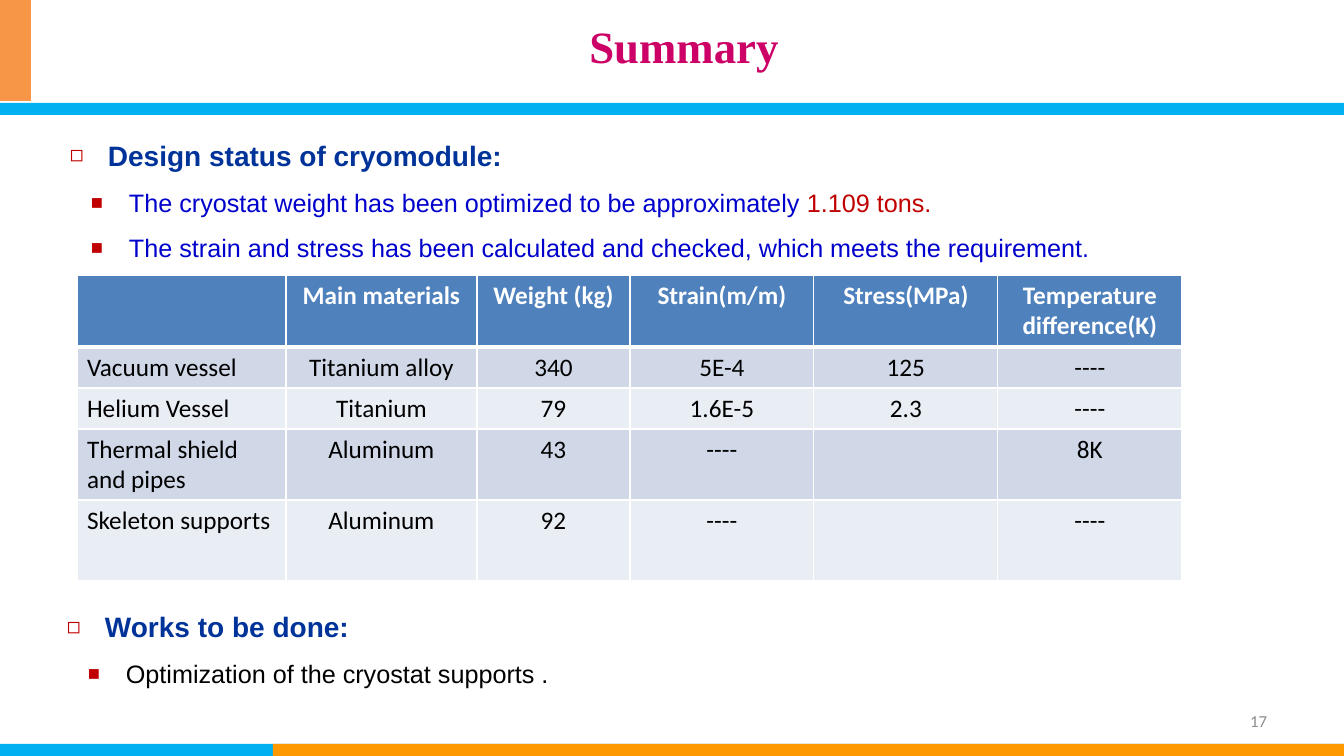
import pptx
import pptx.util
import pptx.dml.color
import pptx.enum.shapes
import pptx.enum.text
import pptx.oxml.ns
from dataclasses import dataclass
from lxml import etree

SLIDE_WIDTH, SLIDE_HEIGHT = 1344, 756
EMU_PER_PX = 12192000 / SLIDE_WIDTH
ALIGN = pptx.enum.text.PP_ALIGN
ANCHOR = pptx.enum.text.MSO_ANCHOR


@dataclass(frozen=True)
class Theme:
    sky: str = "00B0F0"
    amber: str = "FF9900"
    orange: str = "F79646"
    title: str = "CC0066"
    heading: str = "003399"
    point: str = "0000CC"
    accent: str = "C00000"
    black: str = "000000"
    white: str = "FFFFFF"
    gray: str = "8C8C8C"
    header_fill: str = "4F81BD"
    band_fills: tuple = ("D0D8E8", "E9EDF4")
    title_font: str = "Times New Roman"
    body_font: str = "Arial"
    table_font: str = "Calibri"
    title_size: int = 32
    heading_size: int = 20
    point_size: int = 18
    number_size: int = 12


THEME = Theme()

STATUS_HEADING = "Design status of cryomodule:"
STATUS_POINTS = [
    [("The cryostat weight has been optimized to be approximately ", THEME.point),
     ("1.109 tons.", THEME.accent)],
    [("The strain and stress has been calculated and checked, "
      "which meets the requirement.", THEME.point)],
]
WORK_HEADING = "Works to be done:"
WORK_POINTS = [[("Optimization of the cryostat supports .", THEME.black)]]

COLUMN_WIDTHS = [209, 191, 153, 184, 184, 184]
ROW_HEIGHTS = [72, 41, 41, 71, 81]
TABLE_ROWS = [
    ["", "Main materials", "Weight (kg)", "Strain(m/m)", "Stress(MPa)",
     "Temperature difference(K)"],
    ["Vacuum vessel", "Titanium alloy", "340", "5E-4", "125", "----"],
    ["Helium Vessel", "Titanium", "79", "1.6E-5", "2.3", "----"],
    ["Thermal shield and pipes", "Aluminum", "43", "----", "", "8K"],
    ["Skeleton supports", "Aluminum", "92", "----", "", "----"],
]


def px(length):
    return pptx.util.Emu(round(length * EMU_PER_PX))


def rgb(color):
    return pptx.dml.color.RGBColor.from_string(color)


def add_run(para, text, font, size, color, bold=False):
    span = para.add_run()
    span.text = text
    span.font.name = font
    span.font.size = pptx.util.Pt(size)
    span.font.bold = bold
    span.font.color.rgb = rgb(color)


def add_child(parent, tag, **attributes):
    return etree.SubElement(parent, pptx.oxml.ns.qn(tag), attributes)


def add_frame(page, box, anchor):
    frame = page.shapes.add_textbox(*map(px, box)).text_frame
    frame.word_wrap = True
    frame.vertical_anchor = anchor
    return frame


def add_bar(page, box, color):
    bar = page.shapes.add_shape(pptx.enum.shapes.MSO_SHAPE.RECTANGLE, *map(px, box))
    bar.shadow.inherit = False
    bar.fill.solid()
    bar.fill.fore_color.rgb = rgb(color)
    bar.line.fill.background()


def add_line(page, box, text, align, font, size, color, bold=False):
    para = add_frame(page, box, ANCHOR.MIDDLE).paragraphs[0]
    para.alignment = align
    add_run(para, text, font, size, color, bold)


def draw_frame(page, box):
    left, top, width, height = box
    foot = 12
    foot_top = top + height - foot
    add_bar(page, (left, foot_top, width, foot), THEME.sky)
    add_bar(page, (left + 273, foot_top, width - 273, foot), THEME.amber)
    add_bar(page, (left, top + 103, width, foot), THEME.sky)
    add_bar(page, (left, top, 31, 101), THEME.orange)
    add_line(page, (left + 219, top + 13, 930, 65), "Summary", ALIGN.CENTER,
             THEME.title_font, THEME.title_size, THEME.title, True)
    add_line(page, (left + 964, foot_top - 43, 313, 40), "17", ALIGN.RIGHT,
             THEME.table_font, THEME.number_size, THEME.gray)


def set_bullet(para, symbol, margin, spacing):
    properties = para._p.get_or_add_pPr()
    properties.set("marL", str(px(margin)))
    properties.set("indent", str(px(-38)))
    color = add_child(properties, "a:buClr")
    add_child(color, "a:srgbClr", val=THEME.accent)
    add_child(properties, "a:buSzPct", val="80000")
    add_child(properties, "a:buFont", typeface=THEME.body_font)
    add_child(properties, "a:buChar", char=symbol)
    para.line_spacing = spacing


def draw_outline(page, box, heading, heading_spacing, points):
    frame = add_frame(page, box, ANCHOR.TOP)
    para = frame.paragraphs[0]
    set_bullet(para, "◻", 38, heading_spacing)
    add_run(para, heading, THEME.body_font, THEME.heading_size, THEME.heading, True)
    for point in points:
        para = frame.add_paragraph()
        set_bullet(para, "■", 59, 1.5)
        for text, color in point:
            add_run(para, text, THEME.body_font, THEME.point_size, color)


def set_borders(cell, row):
    widths = {
        "a:lnL": 1,
        "a:lnR": 1,
        "a:lnT": 3 if row == 1 else 1,
        "a:lnB": 3 if row == 0 else 1,
    }
    properties = cell._tc.get_or_add_tcPr()
    for tag, width in widths.items():
        line = add_child(properties, tag, w=str(pptx.util.Pt(width)))
        fill = add_child(line, "a:solidFill")
        add_child(fill, "a:srgbClr", val=THEME.white)


def draw_table(page, box):
    table = page.shapes.add_table(
        len(TABLE_ROWS), len(COLUMN_WIDTHS), *map(px, box)).table
    for column, width in zip(table.columns, COLUMN_WIDTHS):
        column.width = px(width)
    for row, height in zip(table.rows, ROW_HEIGHTS):
        row.height = px(height)
    for row, texts in enumerate(TABLE_ROWS):
        header = row == 0
        for column, text in enumerate(texts):
            cell = table.cell(row, column)
            set_borders(cell, row)
            cell.fill.solid()
            cell.fill.fore_color.rgb = rgb(
                THEME.header_fill if header else THEME.band_fills[(row - 1) % 2])
            para = cell.text_frame.paragraphs[0]
            para.alignment = ALIGN.CENTER if header or column else ALIGN.LEFT
            if text:
                add_run(para, text, THEME.table_font, THEME.point_size,
                        THEME.white if header else THEME.black, header)


def main():
    deck = pptx.Presentation()
    deck.slide_width = px(SLIDE_WIDTH)
    deck.slide_height = px(SLIDE_HEIGHT)
    page = deck.slides.add_slide(deck.slide_layouts[6])
    draw_frame(page, (0, 0, SLIDE_WIDTH, SLIDE_HEIGHT))
    draw_outline(page, (60, 130, 1281, 256), STATUS_HEADING, 1.1, STATUS_POINTS)
    draw_table(page, (77, 275, sum(COLUMN_WIDTHS), sum(ROW_HEIGHTS)))
    draw_outline(page, (57, 598, 1210, 318), WORK_HEADING, 1.2, WORK_POINTS)
    deck.save("out.pptx")


if __name__ == "__main__":
    main()
